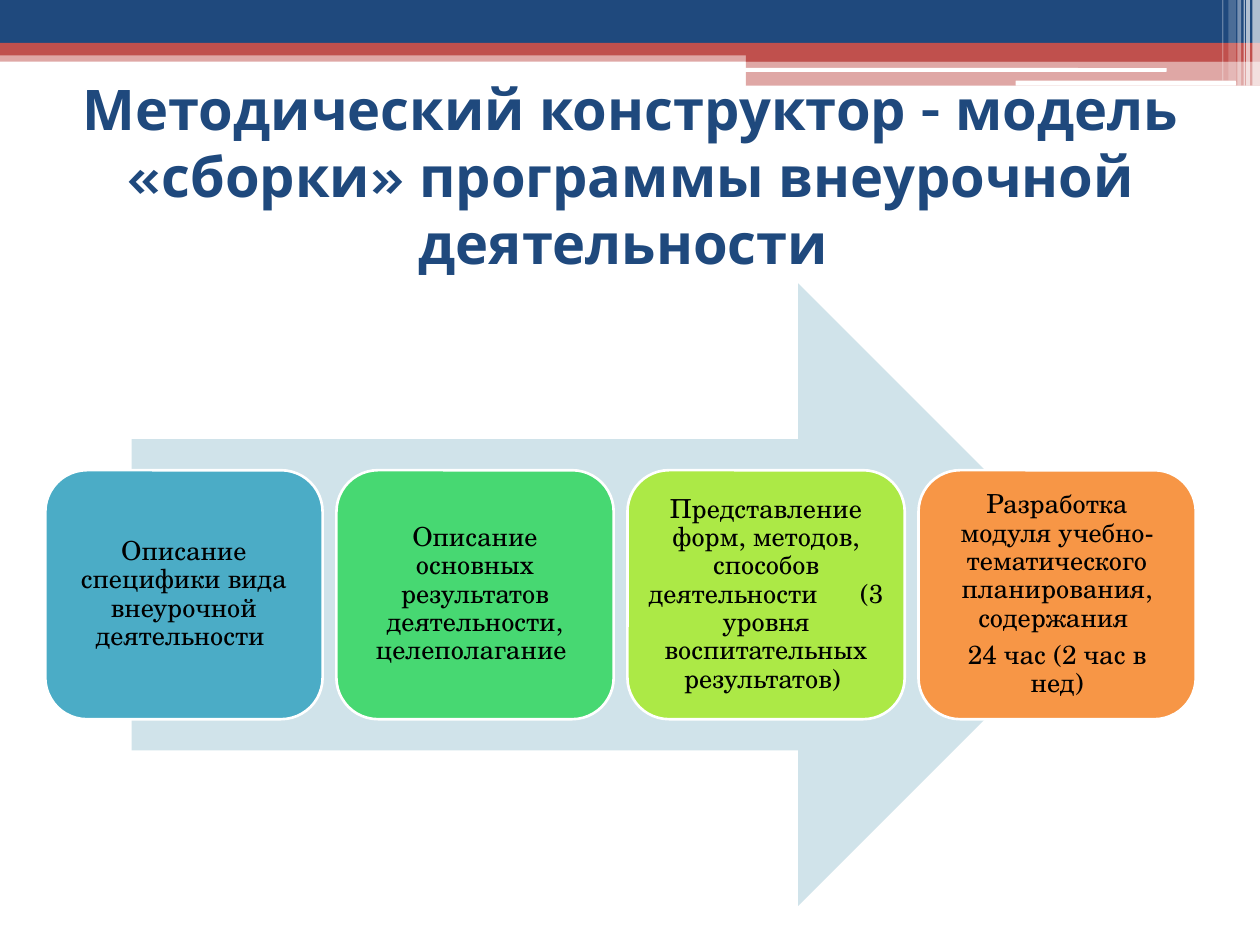
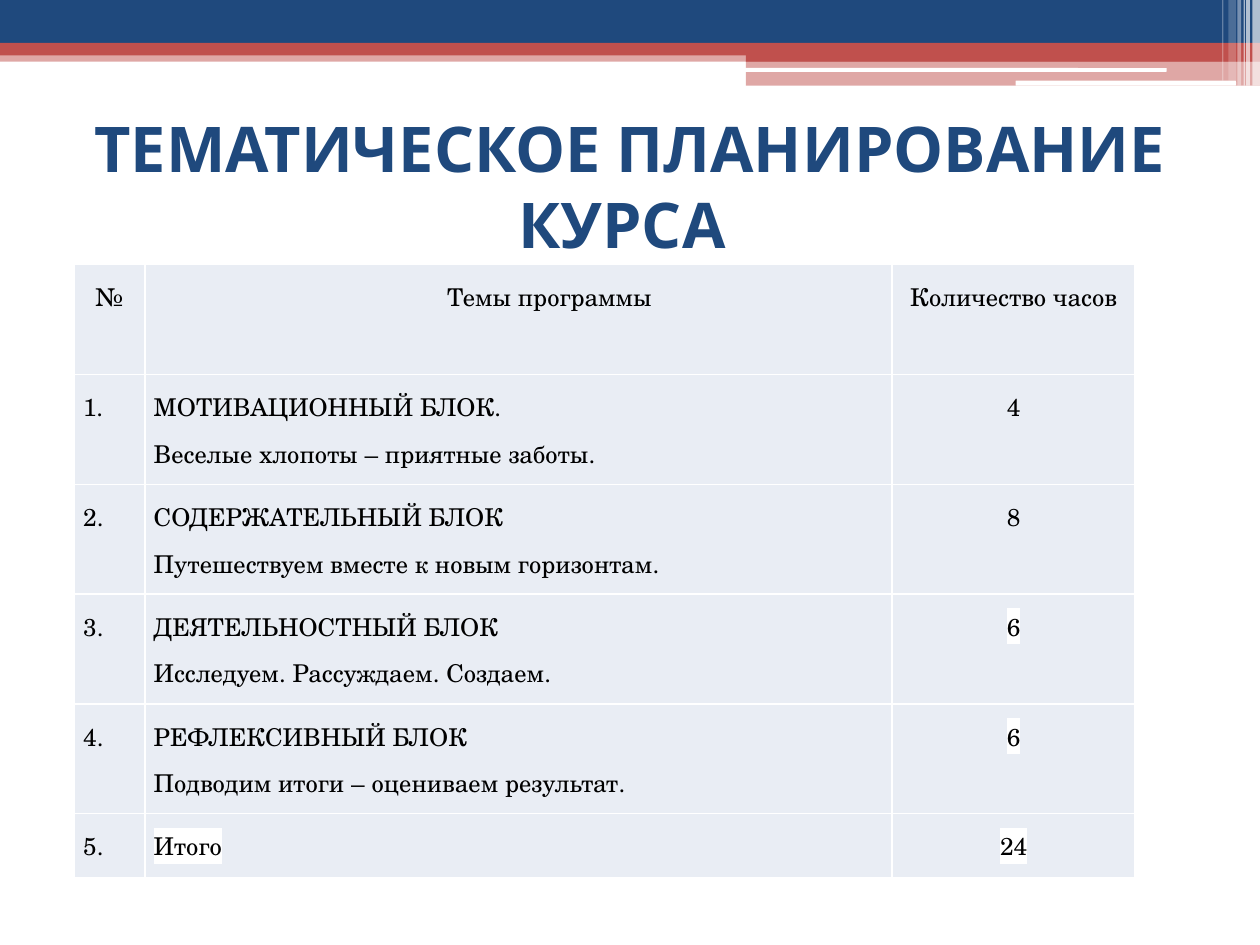
from pptx import Presentation
from pptx.dml.color import RGBColor
from pptx.enum.shapes import MSO_SHAPE as Kind
from pptx.enum.text import MSO_ANCHOR as Anchor, MSO_AUTO_SIZE as Fit, PP_ALIGN as Align
from pptx.oxml.ns import qn
from pptx.util import Inches, Pt
from lxml.etree import SubElement as Sub, Element

# Shared look
NAVY, RED, WHITE, BLACK = "1F497D", "C0504D", "FFFFFF", "000000"
PALE, CELL = "D0E3EA", "E9EDF4"
HEAD, BODY = "Karla", "TeX Gyre Schola"
COLS, ROWS = 100, 75  # page grid

deck = Presentation()
deck.slide_width, deck.slide_height = Inches(10), Inches(7.5)
LAY = deck.slide_layouts[5]


def rgb(code):
    return RGBColor.from_string(code)


def place(box):
    """Turn grid columns and rows into lengths."""
    x, y, w, h = box
    col, row = deck.slide_width / COLS, deck.slide_height / ROWS
    return [round(v) for v in (x * col, y * row, w * col, h * row)]


def part(box, x, y, w, h):
    """A box inside another, given as shares of it."""
    left, top, wide, high = box
    return left + x * wide, top + y * high, w * wide, h * high


def draw(page, kind, box, fill, alpha=100, line=None):
    shape = page.shapes.add_shape(kind, *place(box))
    shape.shadow.inherit = False
    shape.fill.solid()
    shape.fill.fore_color.rgb = rgb(fill)
    if alpha < 100:
        tint = shape.fill._xPr.find(qn("a:solidFill"))[0]
        Sub(tint, qn("a:alpha")).set("val", str(alpha * 1000))
    if line:
        shape.line.color.rgb = rgb(line)
        shape.line.width = Pt(1.5)
    else:
        shape.line.fill.background()
    return shape


def write(para, text, size, face=BODY, color=BLACK, bold=False, mark=None):
    run = para.add_run()
    run.text = text
    font = run.font
    font.size, font.bold = Pt(size), bold
    font.color.rgb = rgb(color)
    font.name = face
    if mark:
        glow = Element(qn("a:highlight"))
        Sub(glow, qn("a:srgbClr")).set("val", mark)
        font._element.find(qn("a:latin")).addprevious(glow)
    return run


def lines(frame, count):
    """The frame's first paragraph and as many more as needed."""
    return [frame.paragraphs[0]] + [frame.add_paragraph() for _ in range(count - 1)]


def inset(thing, gap):
    thing.margin_left = thing.margin_right = Inches(gap)
    thing.margin_top = thing.margin_bottom = Inches(gap)


# Bands at the top, kept on the layout
def bands(page):
    rect, pill = Kind.RECTANGLE, Kind.ROUNDED_RECTANGLE
    for kind, box, fill, alpha in (
        (rect, (0, 4, 100, 0.9), RED, 50),
        (rect, (0, 0, 100, 3.4), NAVY, 100),
        (rect, (0, 3.4, 100, 1), RED, 100),
        (rect, (59.2, 3.9, 40.8, 1), RED, 100),
        (rect, (59.2, 4.8, 40.8, 2), RED, 50),
        (pill, (59.1, 5.4, 33.5, 0.3), WHITE, 100),
        (pill, (80.6, 6.4, 17.5, 0.4), WHITE, 100),
    ):
        draw(page, kind, box, fill, alpha)
    # Thin stripes in the corner
    for x, wide, high, alpha in (
        (99.4, 0.6, 6.8, 65), (98.9, 0.3, 6.8, 65), (98.7, 0.1, 6.8, 60),
        (98.2, 0.3, 6.8, 40), (97.5, 0.6, 6.4, 20), (97, 0.1, 6.4, 30),
    ):
        draw(page, rect, (x, 0, wide, high), WHITE, alpha)
    tree = LAY.shapes.element
    made = [s.element for s in page.shapes if not s.is_placeholder]
    for spot, item in enumerate(made, 2):
        tree.insert(spot, item)


def title(page, box, text, size):
    head = page.shapes.title
    head.left, head.top, head.width, head.height = place(box)
    frame = head.text_frame
    frame.word_wrap, frame.auto_size = True, Fit.NONE
    frame.vertical_anchor = Anchor.MIDDLE
    para = frame.paragraphs[0]
    para.alignment = Align.CENTER
    write(para, text, size, HEAD, NAVY, True)


# Arrow with a row of cards over it
def flow(page, box, cards):
    draw(page, Kind.RIGHT_ARROW, part(box, 0.075, 0, 0.85, 1), PALE)
    gap = 0.012
    wide = (1 - gap * (len(cards) - 1)) / len(cards)
    for i, (fill, paras) in enumerate(cards):
        spot = part(box, i * (wide + gap), 0.3, wide, 0.4)
        card = draw(page, Kind.ROUNDED_RECTANGLE, spot, fill, line=WHITE)
        frame = card.text_frame
        frame.word_wrap, frame.vertical_anchor = True, Anchor.MIDDLE
        inset(frame, 0.06)
        for para, runs in zip(lines(frame, len(paras)), paras):
            para.alignment, para.line_spacing = Align.CENTER, 0.9
            para.space_after = Pt(5)
            for text in runs:
                run = write(para, text, 15)
                if text == " ":  # wide gap
                    run.font._element.set("spc", "2000")


def edge(cell):
    prop = cell._tc.get_or_add_tcPr()
    for spot, side in enumerate(("lnL", "lnR", "lnT", "lnB")):
        rim = Element(qn("a:" + side), w=str(Pt(1)))
        Sub(Sub(rim, qn("a:solidFill")), qn("a:srgbClr")).set("val", WHITE)
        prop.insert(spot, rim)


# Table of topics and hours
def plan(page, box, wides, highs, rows, marks):
    left, top, width, height = place(box)
    grid = page.shapes.add_table(len(rows), len(wides), left, top, width, height).table
    for col, share in zip(grid.columns, wides):
        col.width = round(width * share / sum(wides))
    for row, share in zip(grid.rows, highs):
        row.height = round(height * share / sum(highs))
    for r, row in enumerate(rows):
        for c, text in enumerate(row):
            cell = grid.cell(r, c)
            inset(cell, 0.07)
            cell.fill.solid()
            cell.fill.fore_color.rgb = rgb(CELL)
            edge(cell)
            texts = text.split("\n")
            for para, piece in zip(lines(cell.text_frame, len(texts)), texts):
                mid = r == 0 or c == 2
                para.alignment = Align.CENTER if mid else Align.JUSTIFY
                para.line_spacing, para.space_before = 1.15, Pt(3)
                if (r, c) == (0, 1):
                    para._p.get_or_add_pPr().set("indent", str(Inches(0.49)))
                write(para, piece, 14, mark=WHITE if (r, c) in marks else None)


def main():
    page = deck.slides.add_slide(LAY)
    bands(page)
    title(page, (2.8, 7.6, 94.5, 12.6),
          "Методический конструктор - модель «сборки» программы внеурочной деятельности ", 32)
    flow(page, (3.6, 22.5, 91.3, 49.4), (
        ("4BACC6", [["Описание специфики вида внеурочной деятельности "]]),
        ("47D872", [["Описание основных результатов деятельности, целеполагание "]]),
        ("ACE946", [["Представление форм, методов, способов деятельности", " ",
                     "(3 уровня воспитательных результатов) "]]),
        ("F79646", [["Разработка модуля учебно-тематического планирования, содержания "],
                    ["24 час (2 час в нед)"]]),
    ))

    page = deck.slides.add_slide(LAY)
    title(page, (5, 9.2, 90, 11), "ТЕМАТИЧЕСКОЕ ПЛАНИРОВАНИЕ КУРСА ", 36)
    plan(page, (5.9, 21, 84.2, 48.7), (5.6, 59.3, 19.3), [8.7] * 5 + [5.1], (
        ("№", "Темы программы", "Количество часов"),
        ("1.", "МОТИВАЦИОННЫЙ БЛОК. \nВеселые хлопоты – приятные заботы.", "4"),
        ("2.", "СОДЕРЖАТЕЛЬНЫЙ БЛОК\nПутешествуем вместе к новым горизонтам.", "8"),
        ("3.", "ДЕЯТЕЛЬНОСТНЫЙ БЛОК\nИсследуем. Рассуждаем. Создаем.", "6"),
        ("4.", "РЕФЛЕКСИВНЫЙ БЛОК\nПодводим итоги – оцениваем результат.", "6"),
        ("5.", "Итого", "24"),
    ), {(3, 2), (4, 2), (5, 1), (5, 2)})
    deck.save("out.pptx")


if __name__ == "__main__":
    main()
